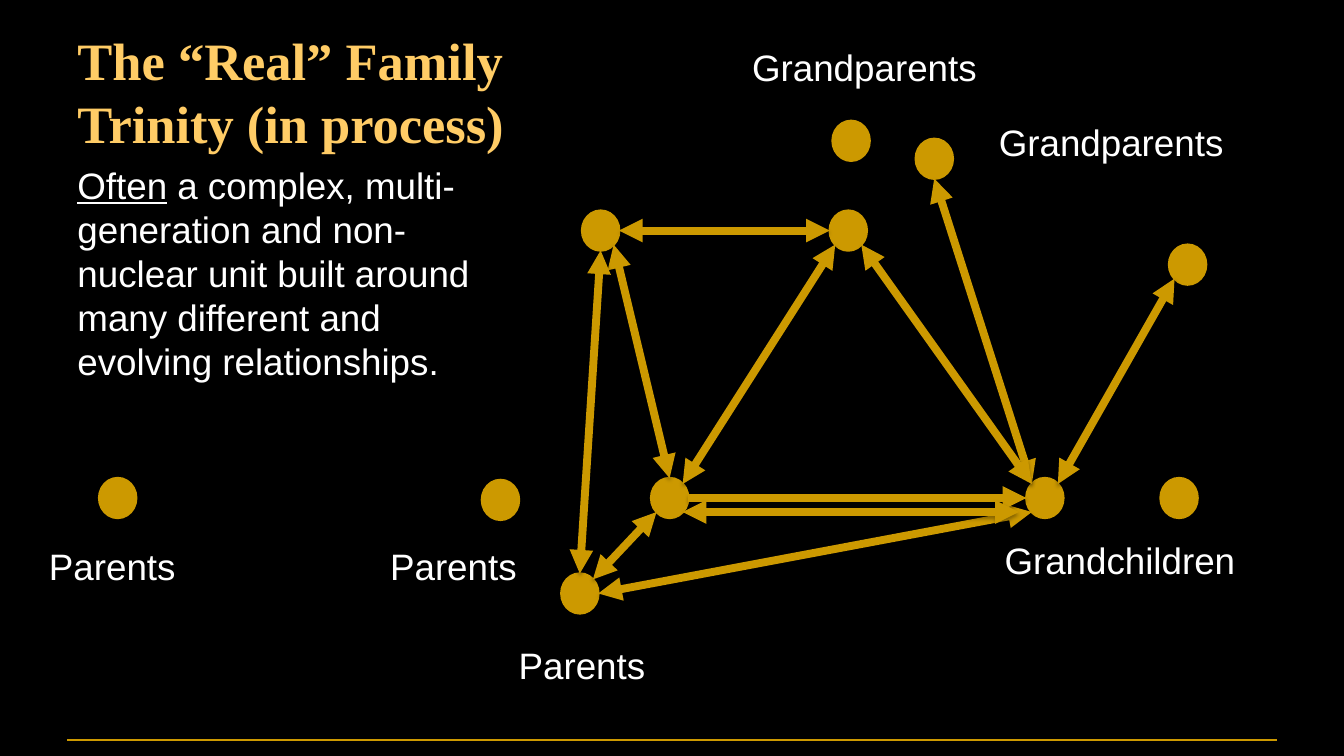
from dataclasses import dataclass
from math import sqrt

from lxml.etree import SubElement
from pptx import Presentation
from pptx.dml.color import RGBColor
from pptx.enum.shapes import MSO_CONNECTOR, MSO_SHAPE
from pptx.enum.text import MSO_ANCHOR, MSO_AUTO_SIZE, PP_ALIGN
from pptx.oxml.ns import qn
from pptx.util import Inches, Pt


@dataclass(frozen=True)
class Theme:
    back: RGBColor = RGBColor(0, 0, 0)
    gold: RGBColor = RGBColor(0xCC, 0x99, 0x00)
    head: RGBColor = RGBColor(0xFF, 0xCC, 0x66)
    text: RGBColor = RGBColor(0xFF, 0xFF, 0xFF)
    serif: str = "Times New Roman"
    sans: str = "Arial"
    large: int = 40
    base: int = 28
    rule: float = 1.5
    edge: float = 2
    arrow: float = 6


THEME = Theme()
WIDE, HIGH = 0.39, 0.42
DIAG = sqrt(0.5)
SIDES = {
    "N": (0, -1), "S": (0, 1), "W": (-1, 0), "E": (1, 0),
    "NW": (-DIAG, -DIAG), "NE": (DIAG, -DIAG),
    "SW": (-DIAG, DIAG), "SE": (DIAG, DIAG),
}
NODES = {
    "father": (6.16, 2.23), "mother": (8.78, 2.23),
    "son": (6.89, 5.06), "child": (10.86, 5.06),
    "elder": (9.69, 1.47), "aunt": (12.37, 2.59),
    "granny": (8.81, 1.28), "parent": (5.94, 6.07),
    "partner": (5.1, 5.08), "cousin": (12.28, 5.06),
    "single": (1.05, 5.06),
}
LINKS = [
    ("mother", "SW", "son", "NE"),
    ("elder", "S", "child", "NW"),
    ("aunt", "SW", "child", "NE"),
    ("father", "SE", "son", "N"),
    ("mother", "SE", "child", "NW"),
    ("parent", "E", "child", "SW"),
    ("parent", "NE", "son", "SW"),
    ("father", "S", "parent", "N"),
    ("father", "E", "mother", "W"),
]
LABELS = [
    ("Grandparents", (7.86, 0.42, 2.61, 0.57)),
    ("Grandparents", (10.47, 1.22, 2.61, 0.57)),
    ("Grandchildren", (10.53, 5.64, 2.68, 0.57)),
    ("Parents", (4.03, 5.71, 1.56, 0.57)),
    ("Parents", (0.42, 5.71, 1.56, 0.57)),
    ("Parents", (5.39, 6.75, 1.56, 0.57)),
]


def add_run(para, text, size, face, color, bold=False, under=False):
    run = para.add_run()
    run.text = text
    font = run.font
    font.size, font.name = Pt(size), face
    font.bold, font.underline = bold, under
    font.color.rgb = color


def place(shape, box):
    shape.left, shape.top, shape.width, shape.height = map(Inches, box)


def set_frame(shape, anchor):
    frame = shape.text_frame
    frame.word_wrap = True
    frame.auto_size = MSO_AUTO_SIZE.NONE
    frame.vertical_anchor = anchor
    frame.margin_left = frame.margin_right = Inches(0.11)
    frame.margin_top = frame.margin_bottom = Inches(0.05)
    para = frame.paragraphs[0]
    para.alignment = PP_ALIGN.LEFT
    return para


def add_title(slide, box):
    title = slide.shapes.title
    place(title, box)
    para = set_frame(title, MSO_ANCHOR.BOTTOM)
    add_run(para, "The “Real” Family Trinity (in process)",
            THEME.large, THEME.serif, THEME.head, bold=True)


def add_body(slide, box):
    body = slide.placeholders[1]
    place(body, box)
    para = set_frame(body, MSO_ANCHOR.TOP)
    para.space_before = Pt(THEME.base * 0.2)
    props = para._p.get_or_add_pPr()
    props.set("marL", "0")
    props.set("indent", "0")
    SubElement(props, qn("a:buNone"))
    add_run(para, "Often", THEME.base, THEME.sans, THEME.text, under=True)
    add_run(para, " a complex, multi- generation and non-nuclear unit built "
            "around many different and evolving relationships.",
            THEME.base, THEME.sans, THEME.text)


def add_label(slide, text, box):
    label = slide.shapes.add_textbox(*map(Inches, box))
    frame = label.text_frame
    frame.word_wrap = False
    frame.auto_size = MSO_AUTO_SIZE.SHAPE_TO_FIT_TEXT
    add_run(frame.paragraphs[0], text, THEME.base, THEME.sans, THEME.text)


def add_node(slide, left, top):
    node = slide.shapes.add_shape(
        MSO_SHAPE.OVAL, *map(Inches, (left, top, WIDE, HIGH)))
    node.shadow.inherit = False
    node.fill.solid()
    node.fill.fore_color.rgb = THEME.gold
    node.line.color.rgb = THEME.gold
    node.line.width = Pt(THEME.edge)


def add_line(slide, start, end, width):
    line = slide.shapes.add_connector(
        MSO_CONNECTOR.STRAIGHT, *map(Inches, (*start, *end)))
    line.line.color.rgb = THEME.gold
    line.line.width = Pt(width)
    effect = SubElement(line._element.spPr, qn("a:effectLst"))
    return line, effect


def add_arrow(slide, start, end, both=True):
    line, effect = add_line(slide, start, end, THEME.arrow)
    stroke = line.line._get_or_add_ln()
    for tag in ("a:headEnd", "a:tailEnd") if both else ("a:tailEnd",):
        SubElement(stroke, qn(tag), type="triangle")
    shade = SubElement(effect, qn("a:outerShdw"), blurRad=str(Pt(3.1)),
                       dist=str(Pt(1.8)), dir="5400000", rotWithShape="0")
    color = SubElement(shade, qn("a:srgbClr"), val=str(THEME.back))
    SubElement(color, qn("a:alpha"), val="35000")


def add_web(slide, box):
    x, y = box[:2]

    def site(name, side):
        left, top = NODES[name]
        across, down = SIDES[side]
        return (x + left + WIDE / 2 * (1 + across),
                y + top + HIGH / 2 * (1 + down))

    for left, top in NODES.values():
        add_node(slide, x + left, y + top)
    for first, out, last, into in LINKS:
        add_arrow(slide, site(first, out), site(last, into))
    add_arrow(slide, site("son", "E"), site("child", "W"), both=False)
    start = site("son", "SE")
    add_arrow(slide, start, (x + 10.78, start[1]))
    for text, (left, top, width, height) in LABELS:
        add_label(slide, text, (x + left, y + top, width, height))


def main():
    deck = Presentation()
    deck.slide_width, deck.slide_height = Inches(14.22), Inches(8)
    slide = deck.slides.add_slide(deck.slide_layouts[1])
    slide.background.fill.solid()
    slide.background.fill.fore_color.rgb = THEME.back
    add_line(slide, (0.71, 7.83), (13.51, 7.83), THEME.rule)
    add_title(slide, (0.71, 0.32, 4.82, 1.36))
    add_body(slide, (0.71, 1.67, 4.68, 5.47))
    add_web(slide, (0, 0, 14.22, 8))
    deck.save("out.pptx")


if __name__ == "__main__":
    main()
